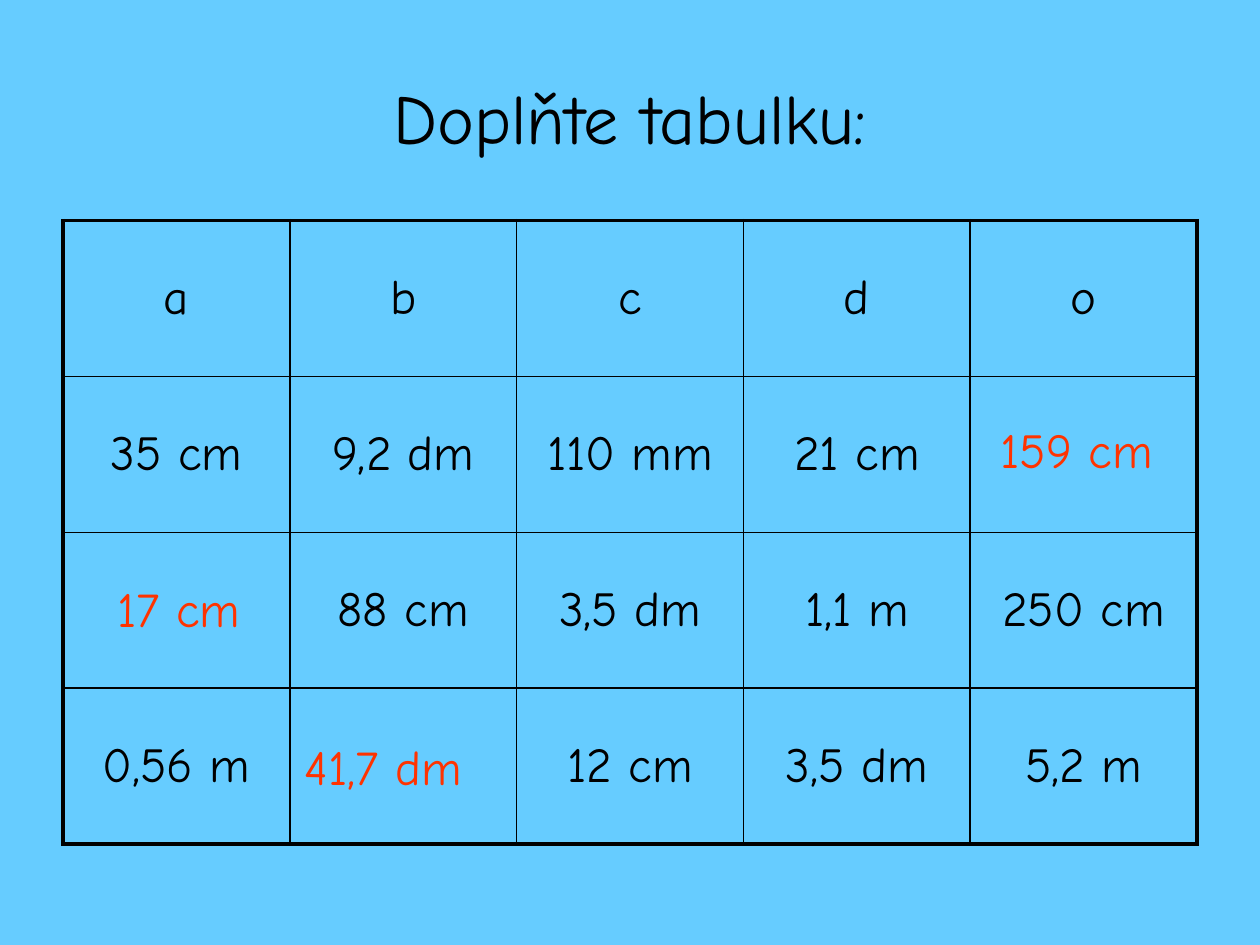
from lxml.etree import SubElement
from pptx import Presentation
from pptx.dml.color import RGBColor
from pptx.enum.text import MSO_ANCHOR as Anchor, PP_ALIGN as Align
from pptx.oxml.ns import qn
from pptx.util import Inches, Pt

FONT, BLACK, RED, SKY = "Comic Neue", "000000", "FF3300", "66CCFF"
THIN, THICK = 1, 2.25
TITLE = "Doplňte tabulku:"
ROWS = [
    ["a", "b", "c", "d", "o"],
    ["35 cm", "9,2 dm", "110 mm", "21 cm", ""],
    ["", "88 cm", "3,5 dm", "1,1 m", "250 cm"],
    ["0,56 m", "", "12 cm", "3,5 dm", "5,2 m"],
]
ANSWERS = [
    ("159 cm", 7.84, 3.28, 1.5, Align.LEFT),
    ("17 cm", 0.75, 4.54, 1.34, Align.CENTER),
    ("41,7 dm", 2.32, 5.8, 1.73, Align.LEFT),
]
LEFT, TOP, WIDTH, HEIGHT = 0.5, 1.75, 9, 4.95


def rgb(code):
    return RGBColor.from_string(code)


def write(tf, text, size, color, align):
    tf.text = text
    p = tf.paragraphs[0]
    p.alignment = align
    for r in p.runs:
        r.font.name = FONT
        r.font.size = Pt(size)
        r.font.color.rgb = rgb(color)


def set_borders(cell, widths):
    tc_pr = cell._tc.get_or_add_tcPr()
    for i, (side, width) in enumerate(widths.items()):
        ln = SubElement(tc_pr, qn(f"a:ln{side}"), w=str(Pt(width)))
        fill = SubElement(ln, qn("a:solidFill"))
        SubElement(fill, qn("a:srgbClr"), val=BLACK)
        tc_pr.insert(i, ln)


def add_table(s):
    n_rows, n_cols = len(ROWS), len(ROWS[0])
    table = s.shapes.add_table(n_rows, n_cols, Inches(LEFT), Inches(TOP),
                               Inches(WIDTH), Inches(HEIGHT)).table
    table.first_row = table.horz_banding = False
    for i, row in enumerate(ROWS):
        for j, text in enumerate(row):
            cell = table.cell(i, j)
            cell.vertical_anchor = Anchor.MIDDLE
            cell.fill.background()
            write(cell.text_frame, text, 28, BLACK, Align.CENTER)
            set_borders(cell, {
                "L": THICK if j == 0 else THIN,
                "R": THICK if j == n_cols - 1 else THIN,
                "T": THICK if i == 0 else THIN,
                "B": THICK if i == n_rows - 1 else THIN,
            })


def main():
    prs = Presentation()
    prs.slide_width, prs.slide_height = Inches(10), Inches(7.5)
    s = prs.slides.add_slide(prs.slide_layouts[5])
    s.background.fill.solid()
    s.background.fill.fore_color.rgb = rgb(SKY)

    add_table(s)

    title = s.shapes.title
    title.left, title.top = Inches(LEFT), Inches(0.3)
    title.width, title.height = Inches(WIDTH), Inches(1.25)
    title.text_frame.vertical_anchor = Anchor.MIDDLE
    write(title.text_frame, TITLE, 40, BLACK, Align.CENTER)

    for text, x, y, w, align in ANSWERS:
        sp = s.shapes.add_textbox(Inches(x), Inches(y), Inches(w), Inches(0.57))
        sp.text_frame.word_wrap = True
        write(sp.text_frame, text, 28, RED, align)

    prs.save("out.pptx")


if __name__ == "__main__":
    main()
